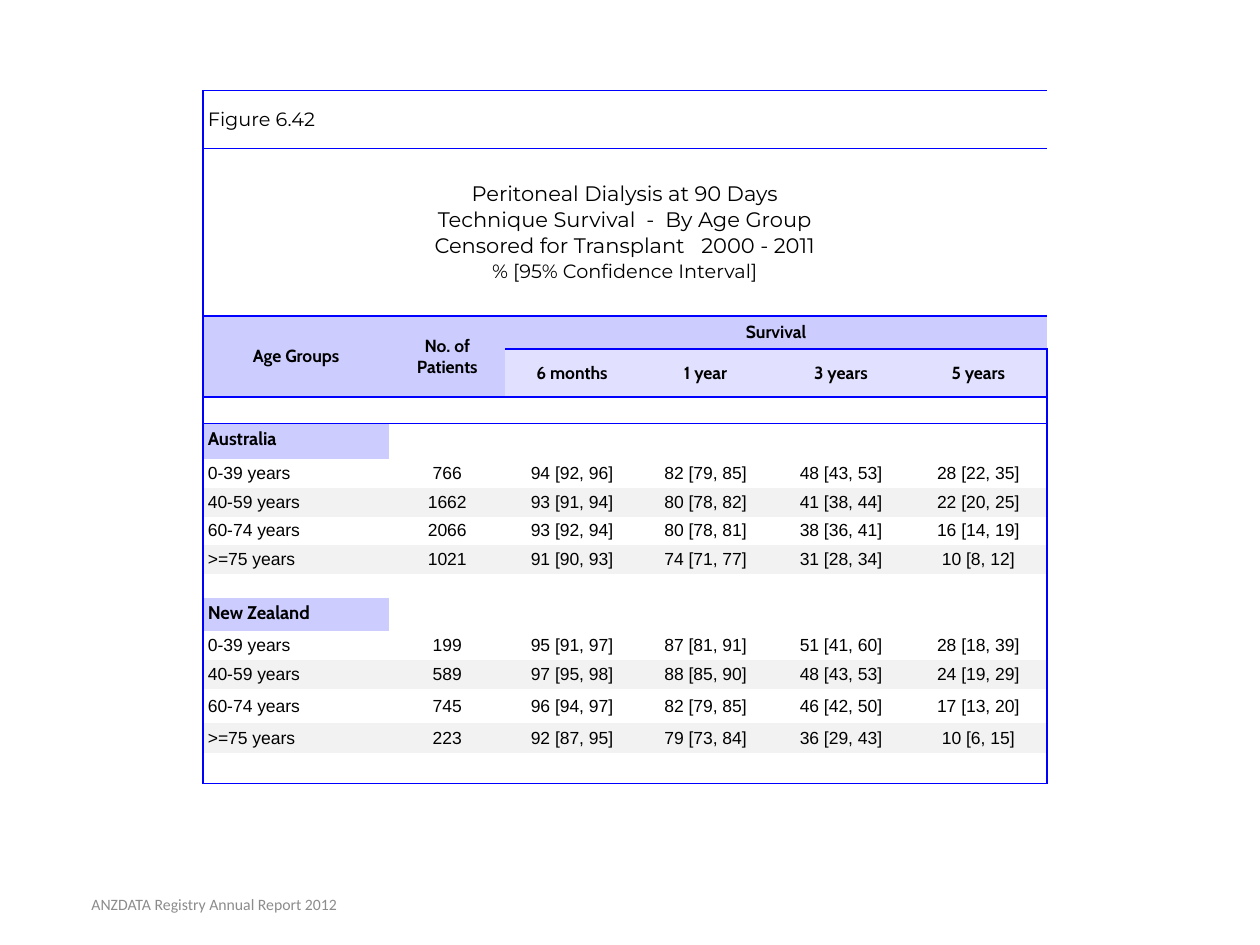
"""Slide with a table of peritoneal dialysis technique survival by age group."""
from lxml.etree import SubElement
from pptx import Presentation
from pptx.dml.color import RGBColor
from pptx.enum.text import MSO_ANCHOR as Anchor, PP_ALIGN as Align
from pptx.oxml.ns import qn
from pptx.util import Inches, Pt

BLACK = RGBColor(0x00, 0x00, 0x00)
BLUE = RGBColor(0x00, 0x00, 0xFF)
LAVENDER = RGBColor(0xCC, 0xCC, 0xFF)
PALE_LAVENDER = RGBColor(0xE1, 0xE1, 0xFF)
STRIPE = RGBColor(0xF2, 0xF2, 0xF2)
GREY = RGBColor(0x8C, 0x8C, 0x8C)

COLUMNS = [1.48, 0.92, 1.06, 1.06, 1.09, 1.09]
ROWS = [0.46, 1.33, 0.26, 0.38, 0.21, 0.28, 0.23, 0.23, 0.23, 0.23,
        0.19, 0.26, 0.23, 0.23, 0.27, 0.24, 0.24]
LAST_ROW, LAST_COLUMN = len(ROWS) - 1, len(COLUMNS) - 1
NO_STYLE = "{2D5ABB26-0587-4C30-8999-92F81FD0307C}"

TITLE = [("Peritoneal Dialysis at 90 Days", 12),
         ("Technique Survival  -  By Age Group", 12),
         ("Censored for Transplant   2000 - 2011", 12),
         ("% [95% Confidence Interval]", 11)]
AGES = ["0-39 years", "40-59 years", "60-74 years", ">=75 years"]
COUNTRIES = [
    (5, "Australia", [
        ["766", "94 [92, 96]", "82 [79, 85]", "48 [43, 53]", "28 [22, 35]"],
        ["1662", "93 [91, 94]", "80 [78, 82]", "41 [38, 44]", "22 [20, 25]"],
        ["2066", "93 [92, 94]", "80 [78, 81]", "38 [36, 41]", "16 [14, 19]"],
        ["1021", "91 [90, 93]", "74 [71, 77]", "31 [28, 34]", "10 [8, 12]"]]),
    (11, "New Zealand", [
        ["199", "95 [91, 97]", "87 [81, 91]", "51 [41, 60]", "28 [18, 39]"],
        ["589", "97 [95, 98]", "88 [85, 90]", "48 [43, 53]", "24 [19, 29]"],
        ["745", "96 [94, 97]", "82 [79, 85]", "46 [42, 50]", "17 [13, 20]"],
        ["223", "92 [87, 95]", "79 [73, 84]", "36 [29, 43]", "10 [6, 15]"]]),
]


def write(paragraph, text, size, font, color=BLACK, bold=False, align=Align.CENTER):
    paragraph.text = text
    paragraph.alignment = align
    paragraph.font.size = Pt(size)
    paragraph.font.name = font
    paragraph.font.bold = bold
    paragraph.font.color.rgb = color


def add_border(cell, side):
    line = SubElement(cell._tc.get_or_add_tcPr(), qn(f"a:ln{side}"), w=str(Pt(1)))
    SubElement(SubElement(line, qn("a:solidFill")), qn("a:srgbClr"), val=str(BLUE))


prs = Presentation()
prs.slide_width, prs.slide_height = Inches(10), Inches(7.5)
slide = prs.slides.add_slide(prs.slide_layouts[6])

frame = slide.shapes.add_table(len(ROWS), len(COLUMNS), Inches(1.61), Inches(0.72),
                               Inches(sum(COLUMNS)), Inches(sum(ROWS)))
survival = frame.table
survival.first_row = survival.horz_banding = False
survival._tbl.tblPr.find(qn("a:tableStyleId")).text = NO_STYLE
for column, width in zip(survival.columns, COLUMNS):
    column.width = Inches(width)
for row, height in zip(survival.rows, ROWS):
    row.height = Inches(height)

for r in range(len(ROWS)):
    for c in range(len(COLUMNS)):
        cell = survival.cell(r, c)
        cell.vertical_anchor = Anchor.MIDDLE
        cell.margin_left = cell.margin_right = Inches(0.04)
        cell.margin_top = cell.margin_bottom = Inches(0.04 if r < 2 else 0.02)
        sides = {"L": c == 0,
                 "R": c == LAST_COLUMN,
                 "T": r in (0, 1, 2, 4) or (r == 3 and c > 1),
                 "B": r in (0, 1, 3, LAST_ROW) or (r == 2 and c > 1)}
        for side, shown in sides.items():
            if shown:
                add_border(cell, side)
        cell.fill.background()

for top, left, bottom, right in [(0, 0, 0, 5), (1, 0, 1, 5), (2, 0, 3, 0),
                                 (2, 1, 3, 1), (2, 2, 2, 5)]:
    survival.cell(top, left).merge(survival.cell(bottom, right))

write(survival.cell(0, 0).text_frame.paragraphs[0], "Figure 6.42", 11, "Montserrat",
      align=Align.LEFT)
title = survival.cell(1, 0).text_frame
for i, (text, size) in enumerate(TITLE):
    write(title.add_paragraph() if i else title.paragraphs[0], text, size, "Montserrat")
title.paragraphs[-1].space_before = Pt(1)

headings = [(2, 0, "Age Groups"), (2, 1, "No. of Patients"), (2, 2, "Survival"),
            (3, 2, "6 months"), (3, 3, "1 year"), (3, 4, "3 years"), (3, 5, "5 years")]
for r, c, text in headings:
    heading = survival.cell(r, c)
    heading.fill.solid()
    heading.fill.fore_color.rgb = LAVENDER if r == 2 else PALE_LAVENDER
    write(heading.text_frame.paragraphs[0], text, 10, "Cabin", bold=True)

for first, country, results in COUNTRIES:
    label = survival.cell(first, 0)
    label.fill.solid()
    label.fill.fore_color.rgb = LAVENDER
    write(label.text_frame.paragraphs[0], country, 10.5, "Cabin", bold=True, align=Align.LEFT)
    label.text_frame.paragraphs[0].line_spacing = 0.75
    for i, (age, values) in enumerate(zip(AGES, results)):
        for c, text in enumerate([age, *values]):
            cell = survival.cell(first + 1 + i, c)
            if i % 2:
                cell.fill.solid()
                cell.fill.fore_color.rgb = STRIPE
            write(cell.text_frame.paragraphs[0], text, 10, "Arial",
                  align=Align.CENTER if c else Align.LEFT)

for cell in survival.iter_cells():
    if not cell.text_frame.text:
        SubElement(cell.text_frame.paragraphs[0]._p, qn("a:endParaRPr"), sz=str(800))

footer = slide.shapes.add_textbox(Inches(0.2), Inches(6.98), Inches(3), Inches(0.4)).text_frame
footer.word_wrap = True
footer.vertical_anchor = Anchor.MIDDLE
write(footer.paragraphs[0], "ANZDATA Registry Annual Report 2012", 9, "Calibri", GREY)

prs.save("out.pptx")
